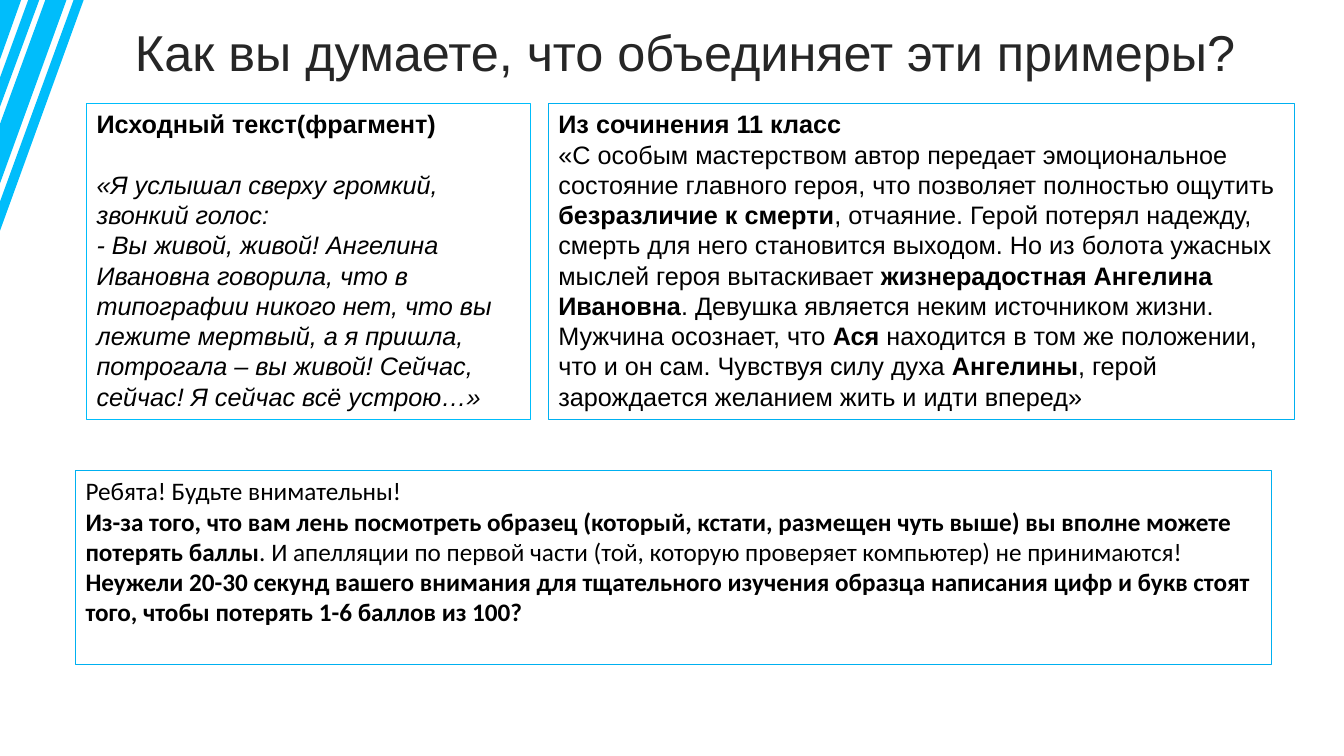
"""Build a slide comparing a source text with a pupil's essay."""
from pptx import Presentation
from pptx.dml.color import RGBColor
from pptx.enum.shapes import MSO_SHAPE as Shape
from pptx.enum.text import MSO_ANCHOR as Anchor, PP_ALIGN as Align
from pptx.util import Inches, Pt

COLORS = {"stripe": "00BDFB", "border": "00B0F0", "title": "262626", "text": "000000"}
LINE_PITCH = Pt(21.6)

STRIPES = [
    [(0.73, 0), (0.83, 0), (0, 2.29), (0, 2)],
    [(0.39, 0), (0, 1.06), (0, 0.77), (0.28, 0)],
    [(0.66, 0), (0, 1.82), (0, 1.23), (0.45, 0)],
    [(0, 0), (0.21, 0), (0, 0.59)],
]

SOURCE_TEXT = [
    [("Исходный текст(фрагмент)", True)],
    [("«Я услышал сверху громкий, звонкий голос:", False)],
    [("- Вы живой, живой! Ангелина Ивановна говорила, что в типографии никого нет, "
      "что вы лежите мертвый, а я пришла, потрогала – вы живой! Сейчас, сейчас! "
      "Я сейчас всё устрою…»", False)],
]
ESSAY = [
    [("Из сочинения 11 класс", True)],
    [("«С особым мастерством автор передает эмоциональное состояние главного героя, "
      "что позволяет полностью ощутить ", False),
     ("безразличие к смерти", True),
     (", отчаяние. Герой потерял надежду, смерть для него становится выходом. "
      "Но из болота ужасных мыслей героя вытаскивает ", False),
     ("жизнерадостная Ангелина Ивановна", True),
     (". Девушка является неким источником жизни. Мужчина осознает, что ", False),
     ("Ася", True),
     (" находится в том же положении, что и он сам. Чувствуя силу духа ", False),
     ("Ангелины", True),
     (", герой зарождается желанием жить и идти вперед»", False)],
]
WARNING = [
    [("Ребята! Будьте внимательны!", False)],
    [("Из-за того, что вам лень посмотреть образец (который, кстати, размещен чуть выше) "
      "вы вполне можете потерять баллы", True),
     (". И апелляции по первой части (той, которую проверяет компьютер) "
      "не принимаются!", False)],
    [("Неужели 20-30 секунд вашего внимания для тщательного изучения образца написания "
      "цифр и букв стоят того, чтобы потерять 1-6 баллов из 100?", True)],
]


def rgb(name):
    """Return the named colour."""
    return RGBColor.from_string(COLORS[name])


def set_font(paragraph, face, size, color):
    """Set the font shared by all runs of a paragraph."""
    paragraph.font.name = face
    paragraph.font.size = Pt(size)
    paragraph.font.color.rgb = rgb(color)


def add_stripes(slide):
    """Draw the slanted corner stripes as one outline."""
    builder = None
    for corners in STRIPES:
        start, *others = [(Inches(x), Inches(y)) for x, y in corners]
        if builder is None:
            builder = slide.shapes.build_freeform(*start)
        else:
            builder.move_to(*start)
        builder.add_line_segments(others, close=True)
    stripes = builder.convert_to_shape()
    stripes.shadow.inherit = False
    stripes.fill.solid()
    stripes.fill.fore_color.rgb = rgb("stripe")
    stripes.line.fill.background()


def add_title(slide, text):
    """Add the centred heading."""
    title = slide.shapes.add_textbox(Inches(0.47), Inches(0.15), Inches(12.66), Inches(0.79))
    frame = title.text_frame
    frame.word_wrap = True
    frame.vertical_anchor = Anchor.MIDDLE
    heading = frame.paragraphs[0]
    heading.text = text
    heading.alignment = Align.CENTER
    heading.line_spacing = 0.9
    set_font(heading, "Arial", 36, "title")


def add_panel(slide, bounds, paragraphs, face, border="border"):
    """Add an outlined panel and return its paragraphs."""
    panel = slide.shapes.add_shape(Shape.RECTANGLE, *map(Inches, bounds))
    panel.shadow.inherit = False
    panel.fill.background()
    panel.line.color.rgb = rgb(border)
    panel.line.width = Pt(0.75)
    frame = panel.text_frame
    frame.word_wrap = True
    frame.vertical_anchor = Anchor.TOP
    for index, segments in enumerate(paragraphs):
        paragraph = frame.add_paragraph() if index else frame.paragraphs[0]
        paragraph.alignment = Align.LEFT
        paragraph.line_spacing = LINE_PITCH
        set_font(paragraph, face, 18, "text")
        for text, bold in segments:
            run = paragraph.add_run()
            run.text = text
            run.font.bold = bold
    return frame.paragraphs


def main():
    """Build and save the slide."""
    deck = Presentation()
    deck.slide_width, deck.slide_height = Inches(13.33), Inches(7.5)
    slide = deck.slides.add_slide(deck.slide_layouts[6])
    add_stripes(slide)
    add_title(slide, "Как вы думаете, что объединяет эти примеры?")
    add_panel(slide, (0.75, 4.67, 11.86, 1.92), WARNING, "Calibri")
    add_panel(slide, (5.44, 1.03, 7.4, 3.13), ESSAY, "Arial")
    _, *quote = add_panel(slide, (0.86, 1.03, 4.4, 3.13), SOURCE_TEXT, "Arial", "stripe")
    quote[0].space_before = LINE_PITCH
    for paragraph in quote:
        paragraph.font.italic = True
    deck.save("out.pptx")


if __name__ == "__main__":
    main()
